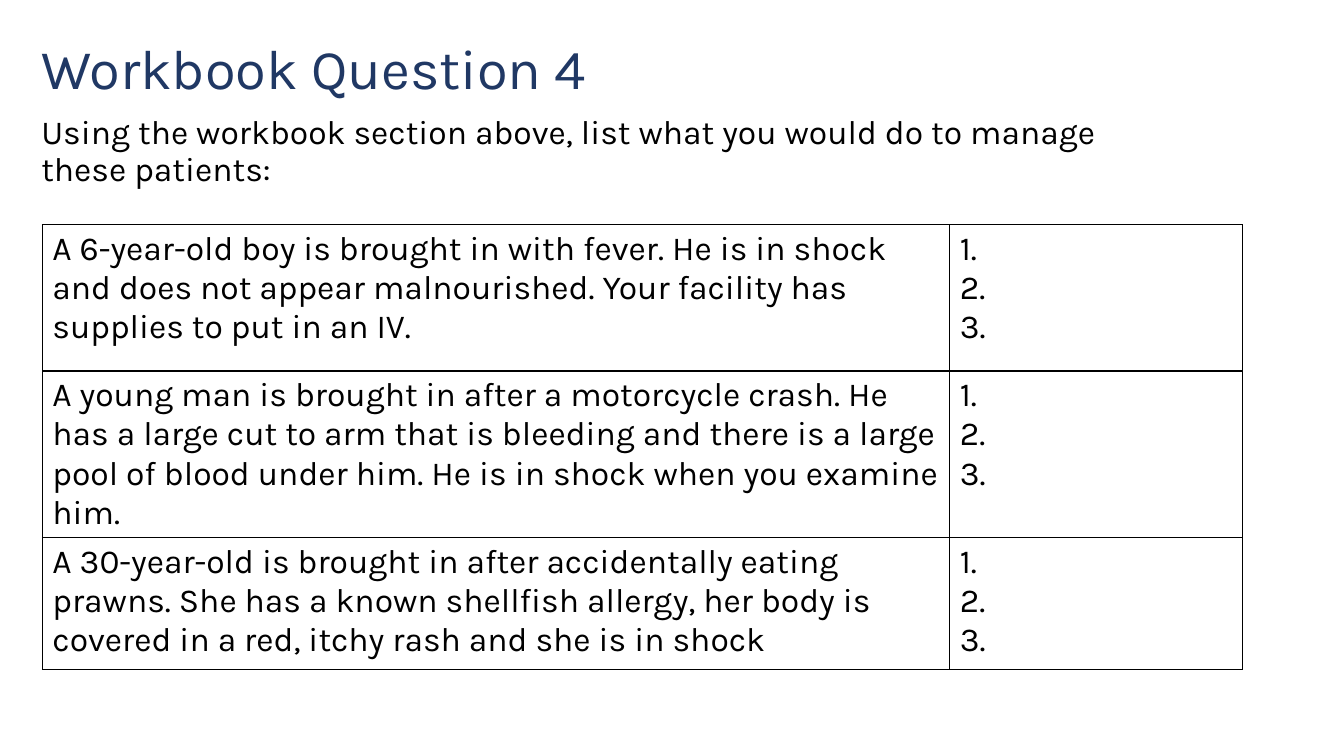
from lxml.etree import SubElement
from pptx import Presentation
from pptx.dml.color import RGBColor
from pptx.enum.text import MSO_ANCHOR as Anchor, MSO_AUTO_SIZE as AutoSize, PP_ALIGN as Align
from pptx.oxml.ns import qn
from pptx.util import Emu, Pt

PX = 9144  # 100 px to the inch
NAVY, BLACK = "203864", "000000"


def px(*lengths):
    return [Emu(length * PX) for length in lengths]


def write(paragraph, text, size=24, color=BLACK, **formats):
    paragraph.text = text
    for name, value in formats.items():
        setattr(paragraph, name, value)
    for name, value in {"name": "Karla", "size": Pt(size), "bold": False}.items():
        setattr(paragraph.font, name, value)
    paragraph.font.color.rgb = RGBColor.from_string(color)


presentation = Presentation()
presentation.slide_width, presentation.slide_height = px(1333, 750)
slide = presentation.slides.add_slide(presentation.slide_layouts[1])

# Title and instruction
title, instruction = slide.shapes.title, slide.placeholders[1]
for shape, box, anchor in (
    (title, (31, -2, 1150, 145), Anchor.MIDDLE),
    (instruction, (31, 110, 1150, 508), Anchor.TOP),
):
    shape.left, shape.top, shape.width, shape.height = px(*box)
    frame_format = {"word_wrap": True, "auto_size": AutoSize.NONE, "vertical_anchor": anchor}
    for name, value in frame_format.items():
        setattr(shape.text_frame, name, value)

heading = {"alignment": Align.LEFT, "line_spacing": 0.9, "space_before": Pt(0)}
write(title.text_frame.paragraphs[0], "Workbook Question 4", 40, NAVY, **heading)

paragraph = instruction.text_frame.paragraphs[0]
properties = paragraph._p.get_or_add_pPr()
properties.set("marL", "0")
properties.set("indent", "0")
SubElement(properties, qn("a:buNone"))
write(paragraph, "Using the workbook section above, list what you would do to manage these patients:",
      **heading)

# Patient cases with numbered answer spaces
cases = [
    "A 6-year-old boy is brought in with fever. He is in shock and does not appear "
    "malnourished. Your facility has supplies to put in an IV.",
    "A young man is brought in after a motorcycle crash. He has a large cut to arm that is "
    "bleeding and there is a large pool of blood under him. He is in shock when you examine him.",
    "A 30-year-old is brought in after accidentally eating prawns. She has a known shellfish "
    "allergy, her body is covered in a red, itchy rash and she is in shock",
]
answers = ["1.", "2.", "3."]

table = slide.shapes.add_table(len(cases), 2, *px(42, 223, 1190, 421)).table
table.first_row = table.horz_banding = False
for column, width in zip(table.columns, px(900, 290)):
    column.width = width
for row, height in zip(table.rows, px(145, 145, 131)):
    row.height = height

for row, case in zip(table.rows, cases):
    for cell, lines in zip(row.cells, ([case], answers)):
        for index, line in enumerate(lines):
            frame = cell.text_frame
            write(frame.add_paragraph() if index else frame.paragraphs[0], line)
        cell_properties = cell._tc.get_or_add_tcPr()
        for side in ("lnL", "lnR", "lnT", "lnB"):
            border = SubElement(cell_properties, qn(f"a:{side}"), w=str(Pt(1)))
            fill = SubElement(border, qn("a:solidFill"))
            SubElement(fill, qn("a:srgbClr"), val=BLACK)
        cell.fill.background()

presentation.save("out.pptx")
